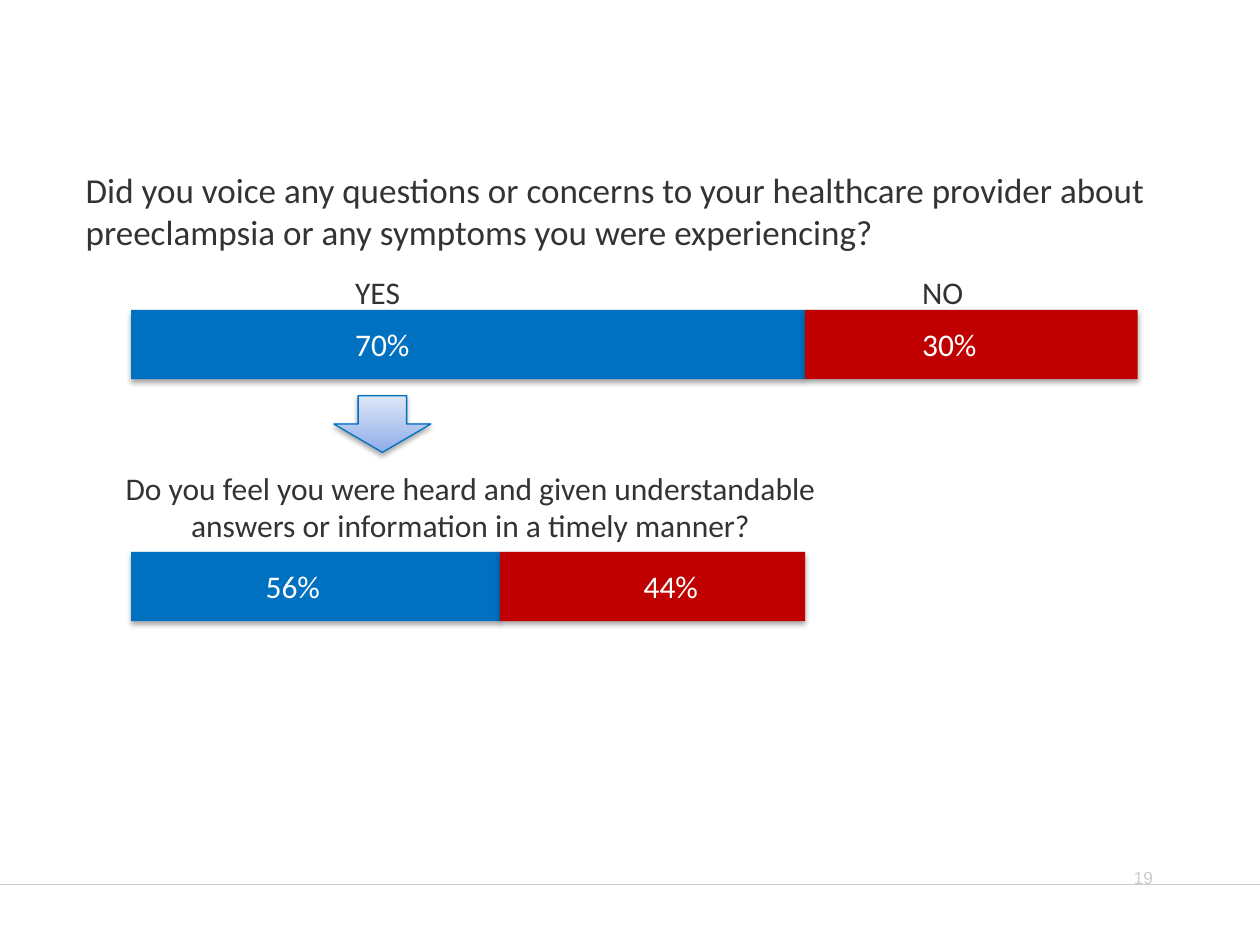
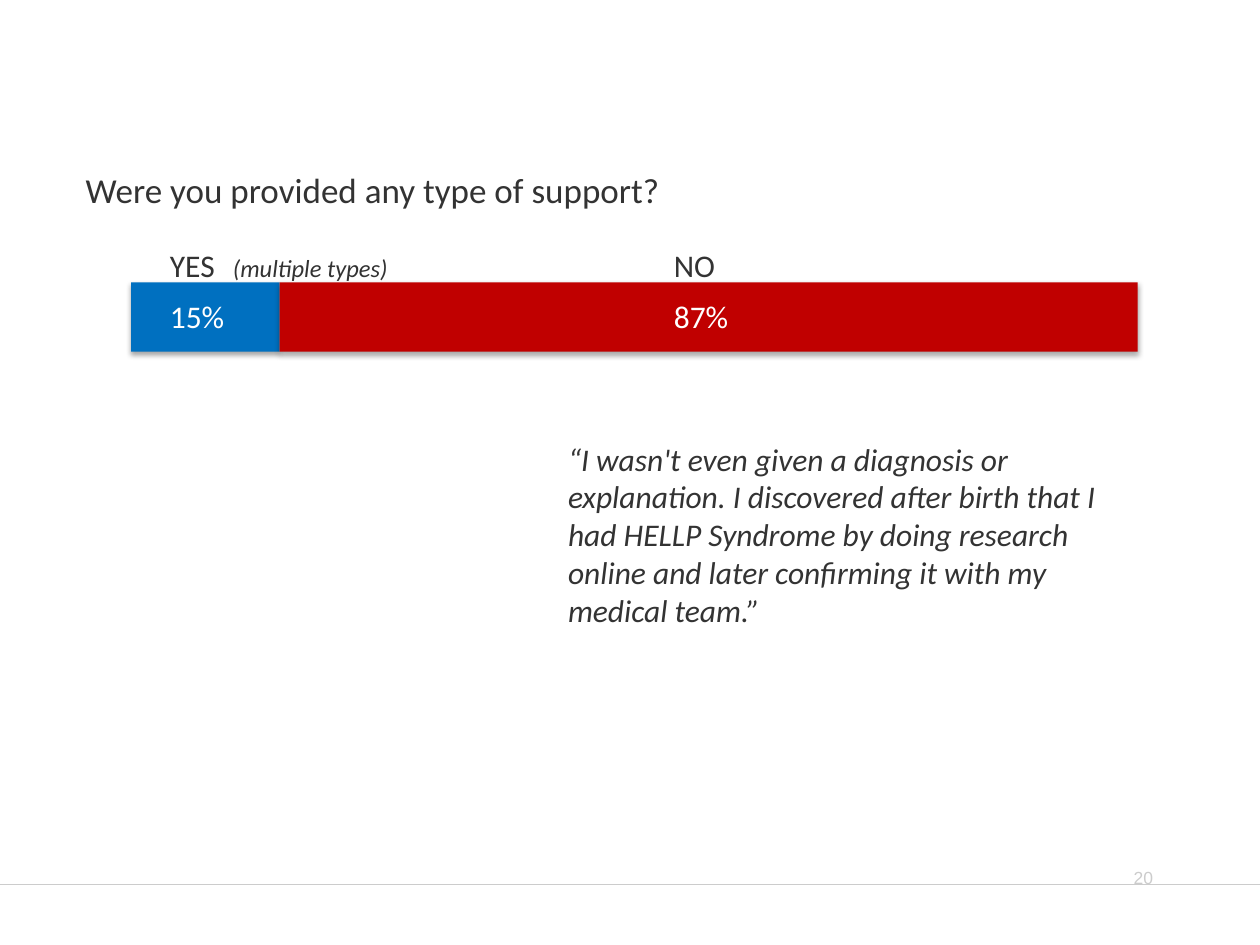
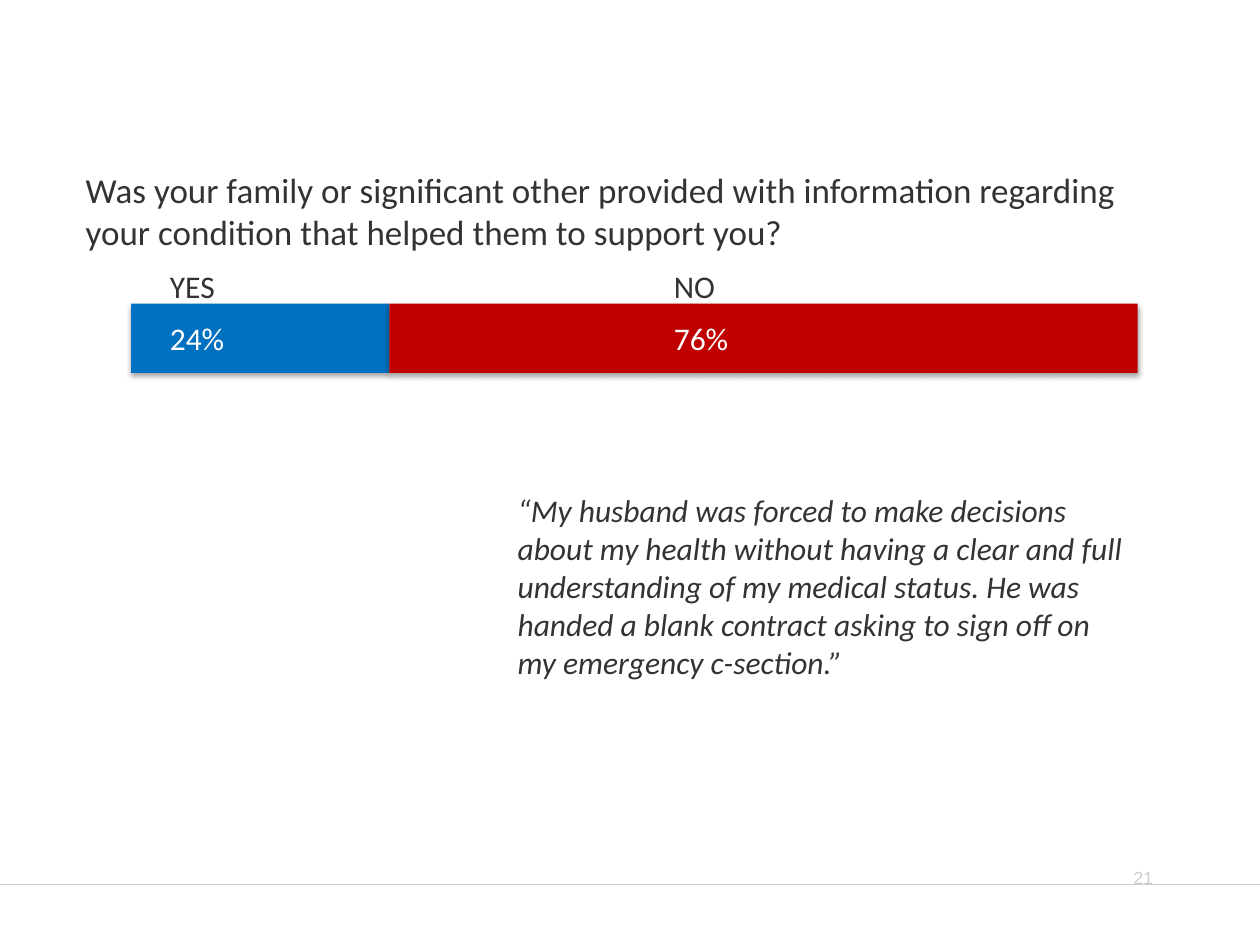
"""Build three survey slides with yes/no split bars."""
import lxml.etree
import pptx
import pptx.dml.color
import pptx.enum.shapes
import pptx.enum.text
import pptx.oxml.ns
import pptx.util

Inches, Pt = pptx.util.Inches, pptx.util.Pt
RGB = pptx.dml.color.RGBColor.from_string
ALIGN = pptx.enum.text.PP_ALIGN
SHAPE = pptx.enum.shapes.MSO_SHAPE
qn = pptx.oxml.ns.qn

THEME = {
    "ink": "333333", "white": "FFFFFF", "muted": "CCCCCC",
    "yes": "0070C0", "no": "C00000",
    "arrow": ("8FADE9", "DEE6F7"),
    "body": "Calibri", "footer": "Arial",
    "question": 20, "text": 18, "note": 14, "page": 10,
}
FIRST_PAGE = 19
BAR_LEFT, BAR_HEIGHT = 1.04, 0.55
LABEL_RISE, VALUE_DROP, ROW_HEIGHT = 0.34, 0.07, 0.4

SLIDES = [
    {
        "question": "Did you voice any questions or concerns to your healthcare provider "
                    "about preeclampsia or any symptoms you were experiencing?",
        "question_height": 0.77,
        "bars": [
            {"top": 2.46, "split": 6.39, "right": 9.03, "row": (2.22, 6.37), "tabs": (0.5, 5),
             "labels": ["\tYES", "\tNO"], "values": ["\t70%", "\t30%"]},
            {"top": 4.38, "split": 3.97, "right": 6.39, "row": (2.01, 4.17), "tabs": (3,),
             "labels": [], "values": ["56%", "\t44%"]},
        ],
        "arrow": (2.65, 3.14, 0.77, 0.45),
        "follow_up": ("Do you feel you were heard and given understandable answers "
                      "or information in a timely manner?", (0.86, 3.67, 5.75, 0.71)),
    },
    {
        "question": "Were you provided any type of support?",
        "question_height": 0.44,
        "bars": [
            {"top": 2.24, "split": 2.22, "right": 9.03, "row": (1.25, 7.34), "tabs": (0.5, 4),
             "labels": ["YES", ("\t(multiple types)", {"size": THEME["note"], "italic": True}),
                        "\tNO"],
             "values": ["15%", "\t87%"], "value_tabs": (4,)},
        ],
        "quote": ("“I wasn't even given a diagnosis or explanation. I discovered after birth "
                  "that I had HELLP Syndrome by doing research online and later confirming it "
                  "with my medical team.”", (4.41, 3.44, 4.61, 1.62)),
    },
    {
        "question": "Was your family or significant other provided with information regarding "
                    "your condition that helped them to support you?",
        "question_height": 0.77,
        "bars": [
            {"top": 2.41, "split": 3.09, "right": 9.03, "row": (1.25, 7.34), "tabs": (4,),
             "labels": ["YES", "\tNO"], "values": ["24%", "\t76%"]},
        ],
        "quote": ("“My husband was forced to make decisions about my health without having a "
                  "clear and full understanding of my medical status. He was handed a blank "
                  "contract asking to sign off on my emergency c-section.”",
                  (4.01, 3.85, 5.01, 1.62)),
    },
]


def write(frame, runs, tabs=(), align=ALIGN.LEFT, **style):
    """Fill a text frame with one paragraph of formatted runs."""
    frame.word_wrap = True
    frame.auto_size = pptx.enum.text.MSO_AUTO_SIZE.NONE
    frame.vertical_anchor = pptx.enum.text.MSO_ANCHOR.TOP
    paragraph = frame.paragraphs[0]
    paragraph.alignment = align
    if tabs:
        stops = lxml.etree.SubElement(paragraph._p.get_or_add_pPr(), qn("a:tabLst"))
        for stop in tabs:
            lxml.etree.SubElement(stops, qn("a:tab"), pos=str(Inches(stop)), algn="l")
    for entry in runs:
        words, extra = (entry, {}) if isinstance(entry, str) else entry
        look = {"name": THEME["body"], "size": THEME["text"], "color": THEME["ink"],
                **style, **extra}
        run = paragraph.add_run()
        run.text = words
        run.font.color.rgb = RGB(look.pop("color"))
        look["size"] = Pt(look["size"])
        for key, value in look.items():
            setattr(run.font, key, value)


def add_text(slide, box, runs, **style):
    """Add a text box with one paragraph."""
    write(slide.shapes.add_textbox(*map(Inches, box)).text_frame, runs, **style)


def add_shadowed(slide, kind, box):
    """Add a preset shape with the soft shadow below it."""
    shape = slide.shapes.add_shape(kind, *map(Inches, box))
    shape.shadow.inherit = False
    effects = shape._element.spPr.find(qn("a:effectLst"))
    shadow = lxml.etree.SubElement(effects, qn("a:outerShdw"), blurRad=str(Pt(3.1)),
                                   dist=str(Pt(1.8)), dir="5400000", rotWithShape="0")
    black = lxml.etree.SubElement(shadow, qn("a:srgbClr"), val="000000")
    lxml.etree.SubElement(black, qn("a:alpha"), val="35000")
    return shape


def add_bar(slide, bar):
    """Draw a yes/no bar with its labels and percentages."""
    top, split = bar["top"], bar["split"]
    for answer, left, right in (("yes", BAR_LEFT, split), ("no", split, bar["right"])):
        part = add_shadowed(slide, SHAPE.RECTANGLE, (left, top, right - left, BAR_HEIGHT))
        part.fill.solid()
        part.fill.fore_color.rgb = RGB(THEME[answer])
        part.line.fill.background()
    left, width = bar["row"]
    if bar["labels"]:
        add_text(slide, (left, top - LABEL_RISE, width, ROW_HEIGHT), bar["labels"],
                 tabs=bar["tabs"])
    add_text(slide, (left, top + VALUE_DROP, width, ROW_HEIGHT), bar["values"],
             tabs=bar.get("value_tabs", bar["tabs"]), color=THEME["white"])


def add_arrow(slide, box):
    """Draw the gradient arrow that leads to the follow-up question."""
    arrow = add_shadowed(slide, SHAPE.DOWN_ARROW, box)
    arrow.fill.gradient()
    arrow.fill.gradient_angle = 90
    for stop, color, position in zip(arrow.fill.gradient_stops, THEME["arrow"], (0, 1)):
        stop.color.rgb = RGB(color)
        stop.position = position
    arrow.line.color.rgb = RGB(THEME["yes"])
    arrow.line.width = Pt(0.75)


def add_footer(slide, page):
    """Draw the footer rule and the page number."""
    rule = slide.shapes.add_connector(pptx.enum.shapes.MSO_CONNECTOR.STRAIGHT,
                                      *map(Inches, (0, 7.02, 10, 7.02)))
    rule.line.color.rgb = RGB(THEME["muted"])
    rule.line.width = Pt(1)
    lxml.etree.SubElement(rule._element.spPr, qn("a:effectLst"))
    add_text(slide, (7.17, 6.83, 2.08, 0.5), [str(page)], align=ALIGN.RIGHT,
             name=THEME["footer"], size=THEME["page"], color=THEME["muted"])


def add_question(slide, question, height):
    """Place the question in the title placeholder."""
    title = slide.shapes.title
    spots = {"left": 0.58, "top": 1.29, "width": 8.76, "height": height}
    for side, length in spots.items():
        setattr(title, side, Inches(length))
    write(title.text_frame, [question], size=THEME["question"])


def main():
    """Build and save the deck."""
    deck = pptx.Presentation()
    deck.slide_width, deck.slide_height = Inches(10), Inches(7.5)
    for page, content in enumerate(SLIDES, FIRST_PAGE):
        slide = deck.slides.add_slide(deck.slide_layouts.get_by_name("Title Only"))
        add_footer(slide, page)
        add_question(slide, content["question"], content["question_height"])
        for bar in content["bars"]:
            add_bar(slide, bar)
        if "arrow" in content:
            add_arrow(slide, content["arrow"])
        if "follow_up" in content:
            words, box = content["follow_up"]
            add_text(slide, box, [words], align=ALIGN.CENTER)
        if "quote" in content:
            words, box = content["quote"]
            add_text(slide, box, [words], italic=True)
    deck.save("out.pptx")


if __name__ == "__main__":
    main()
